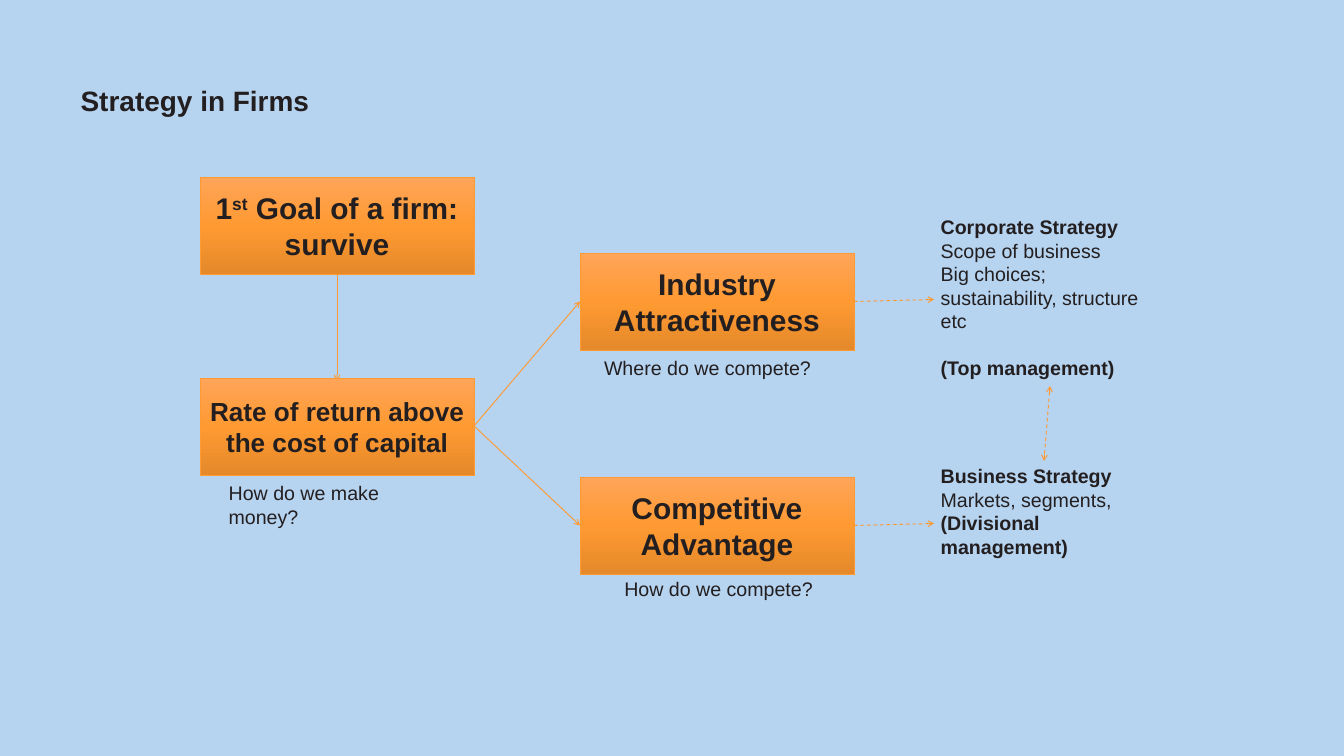
import copy

import pptx
import pptx.util
import pptx.dml.color
import pptx.enum.dml
import pptx.enum.shapes
import pptx.enum.text
import pptx.oxml.ns
import lxml.etree

RGBColor = pptx.dml.color.RGBColor
ALIGN = pptx.enum.text.PP_ALIGN
ANCHOR = pptx.enum.text.MSO_ANCHOR
SKY = RGBColor(0xB6, 0xD3, 0xF0)
INK = RGBColor(0x23, 0x1F, 0x20)
ORANGE = RGBColor(0xFF, 0x9A, 0x32)
LIGHT_ORANGE = RGBColor(0xFF, 0xA5, 0x59)
DARK_ORANGE = RGBColor(0xE5, 0x89, 0x2A)
BOX_W, BOX_H = 274, 97
NOTE_W = 231


def px(n):
    return pptx.util.Emu(round(n * 914400 / 67.2))


def set_font(font, size, bold=False):
    font.name = "Arial"
    font.size = pptx.util.Pt(size)
    font.bold = bold
    font.color.rgb = INK


def add_text(s, x, y, w, h, lines, size=21, align=ALIGN.LEFT):
    """Each line is (text, bold) or a list of such runs."""
    tf = s.shapes.add_textbox(px(x), px(y), px(w), px(h)).text_frame
    tf.word_wrap = True
    for i, line in enumerate(lines):
        p = tf.paragraphs[0] if i == 0 else tf.add_paragraph()
        p.alignment = align
        if isinstance(line, tuple):
            p.text, bold = line
            set_font(p.font, size, bold)
        else:
            set_font(p.font, size)
            for text, bold in line:
                r = p.add_run()
                r.text = text
                r.font.bold = bold
    return tf


def add_box(s, x, y, text, size=32):
    sp = s.shapes.add_shape(pptx.enum.shapes.MSO_SHAPE.RECTANGLE,
                            px(x), px(y), px(BOX_W), px(BOX_H))
    sp.shadow.inherit = False
    sp.line.color.rgb = ORANGE
    sp.line.width = pptx.util.Pt(0.5)
    # Three-stop gradient, light at the top
    sp.fill.gradient()
    sp.fill.gradient_angle = 270
    stops = sp._element.spPr.find(".//" + pptx.oxml.ns.qn("a:gsLst"))
    stops.append(copy.deepcopy(stops[0]))
    colors = (LIGHT_ORANGE, ORANGE, DARK_ORANGE)
    for i, (stop, color) in enumerate(zip(sp.fill.gradient_stops, colors)):
        stop.position = i / 2
        stop.color.rgb = color
    tf = sp.text_frame
    tf.word_wrap = True
    tf.vertical_anchor = ANCHOR.MIDDLE
    p = tf.paragraphs[0]
    p.text = text
    p.alignment = ALIGN.CENTER
    set_font(p.font, size, True)
    return p


def add_arrow(s, x1, y1, x2, y2, dashed=False, both=False):
    c = s.shapes.add_connector(pptx.enum.shapes.MSO_CONNECTOR.STRAIGHT,
                               px(x1), px(y1), px(x2), px(y2))
    c.line.color.rgb = ORANGE
    c.line.width = pptx.util.Pt(1)
    if dashed:
        c.line.dash_style = pptx.enum.dml.MSO_LINE.DASH
    ln = c.line._get_or_add_ln()
    for end in ("a:headEnd", "a:tailEnd") if both else ("a:tailEnd",):
        lxml.etree.SubElement(ln, pptx.oxml.ns.qn(end), type="arrow")
    lxml.etree.SubElement(c._element.spPr, pptx.oxml.ns.qn("a:effectLst"))


def add_title(s, x, y, w, h):
    tf = add_text(s, x, y, w, h, [("Strategy in Firms", True)], size=30)
    tf.vertical_anchor = ANCHOR.BOTTOM
    tf.paragraphs[0].line_spacing = 0.9


def add_goals(s, x, y):
    """Goal of the firm and the return it needs."""
    p = add_box(s, x, y, "")
    for text in ("1", "st", " Goal of a firm: survive"):
        r = p.add_run()
        r.text = text
        if text == "st":
            r.font._element.set("baseline", "30000")
    add_arrow(s, x + BOX_W / 2, y + BOX_H, x + BOX_W / 2, y + 204)
    add_box(s, x, y + 201, "Rate of return above the cost of capital", 28)
    add_text(s, x + 22, y + 301, NOTE_W, 54, [("How do we make money?", False)])


def add_sources(s, x, y, start_x, start_y):
    """Two sources of return, reached from one starting point."""
    rows = ((0, "Industry Attractiveness", "Where do we compete?", 12, 100),
            (224, "Competitive Advantage", "How do we compete?", 23, 321))
    for top, name, question, dx, dy in rows:
        middle = y + top + BOX_H / 2
        add_arrow(s, start_x, start_y, x, middle)
        add_box(s, x, y + top, name)
        add_text(s, x + dx, y + dy, NOTE_W, 30, [(question, False)],
                 align=ALIGN.CENTER)
        add_arrow(s, x + BOX_W, middle, x + 354, middle - 2, dashed=True)


def add_strategies(s, x, y):
    """Corporate and business strategy, linked both ways."""
    tf = add_text(s, x, y, NOTE_W, 173, [
        ("Corporate Strategy", True),
        ("Scope of business", False),
        ("Big choices; sustainability, structure etc", False),
        ("(Top management)", True)])
    tf.paragraphs[-1].space_before = pptx.util.Pt(25)
    add_text(s, x, y + 249, 221, 126, [
        ("Business Strategy", True),
        [("Markets, segments, ", False), ("(Divisional", True)],
        ("management)", True)])
    add_arrow(s, x + 116, y + 174, x + 110, y + 249, dashed=True, both=True)


def main():
    prs = pptx.Presentation()
    prs.slide_width, prs.slide_height = px(1344), px(756)
    s = prs.slides.add_slide(prs.slide_layouts[6])
    s.background.fill.solid()
    s.background.fill.fore_color.rgb = SKY
    add_title(s, 74, 79, 1197, 42)
    add_goals(s, 200, 177)
    add_sources(s, 580, 253, 474, 426)
    add_strategies(s, 934, 212)
    prs.save("out.pptx")


if __name__ == "__main__":
    main()
